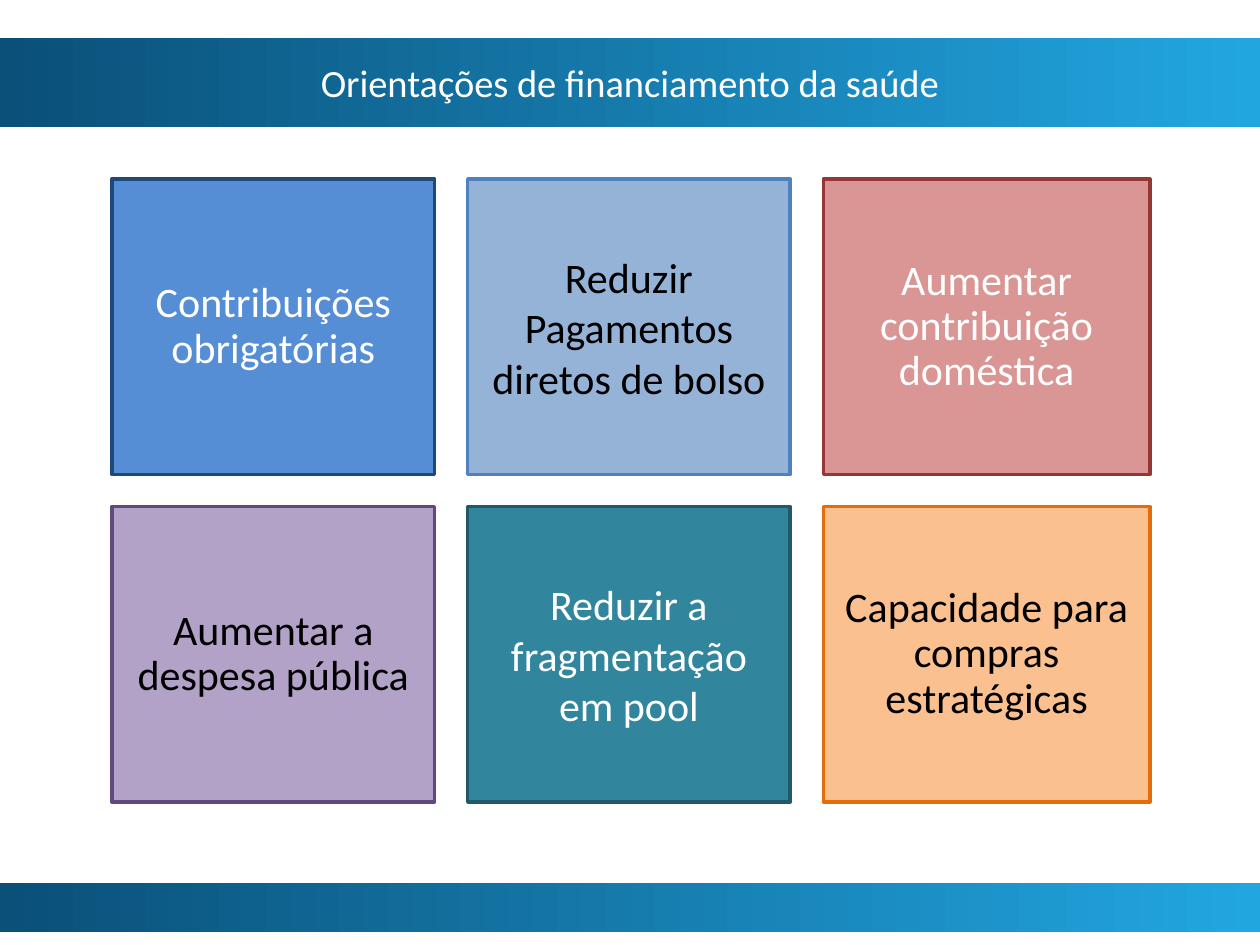
import pptx
import pptx.util
import pptx.dml.color
import pptx.enum.shapes
import pptx.enum.text

Cm, Pt = pptx.util.Cm, pptx.util.Pt
RECTANGLE = pptx.enum.shapes.MSO_SHAPE.RECTANGLE


def color(hex_value):
    return pptx.dml.color.RGBColor.from_string(hex_value)


def write(text_frame, text, size, hex_value, spacing=None):
    text_frame.word_wrap = True
    text_frame.text = text
    for paragraph in text_frame.paragraphs:
        paragraph.alignment = pptx.enum.text.PP_ALIGN.CENTER
        paragraph.line_spacing = spacing
        for run in paragraph.runs:
            run.font.name = "Calibri"
            run.font.size = Pt(size)
            run.font.color.rgb = color(hex_value)


presentation = pptx.Presentation()
presentation.slide_width = Cm(25.4)
presentation.slide_height = Cm(19.05)
slide = presentation.slides.add_slide(presentation.slide_layouts[6])

# Gradient bands: footer and header
for top, height in [(17.81, 0.97), (0.77, 1.79)]:
    band = slide.shapes.add_shape(RECTANGLE, 0, Cm(top), Cm(25.4), Cm(height))
    band.shadow.inherit = False
    band.line.fill.background()
    band.fill.gradient()
    band.fill.gradient_angle = 0
    for stop, position, shade in zip(band.fill.gradient_stops, (0, 1), ("0A5079", "22A6E0")):
        stop.position = position
        stop.color.rgb = color(shade)

# Guideline cards, three to a row: text, fill, line, text colour, line spacing
guidelines = [
    ("Contribuições obrigatórias", "558ED5", "1F497D", "FFFFFF", 0.9),
    ("Reduzir\nPagamentos diretos de bolso", "95B3D7", "4F81BD", "000000", 1.0),
    ("Aumentar\ncontribuição doméstica", "D99694", "953735", "FFFFFF", 0.9),
    ("Aumentar a despesa pública", "B3A2C7", "604A7B", "000000", 0.9),
    ("Reduzir a fragmentação\nem pool", "31859C", "215968", "FFFFFF", 1.0),
    ("Capacidade para compras estratégicas", "FAC090", "E46C0A", "000000", 0.9),
]
card_widths = [6.5, 6.5, 6.58]
for index, (text, fill, line, text_color, spacing) in enumerate(guidelines):
    row, column = divmod(index, 3)
    card = slide.shapes.add_shape(
        RECTANGLE, Cm(2.26 + 7.17 * column), Cm(3.61 + 6.6 * row),
        Cm(card_widths[column]), Cm(5.96))
    card.shadow.inherit = False
    card.fill.solid()
    card.fill.fore_color.rgb = color(fill)
    card.line.color.rgb = color(line)
    card.line.width = Pt(2)
    frame = card.text_frame
    frame.margin_left = frame.margin_right = Cm(0.1)
    frame.margin_top = frame.margin_bottom = Cm(0.2)
    frame.vertical_anchor = pptx.enum.text.MSO_ANCHOR.MIDDLE
    write(frame, text, 24, text_color, spacing)

# Title over the header band
title = slide.shapes.add_textbox(0, Cm(1.07), Cm(25.4), Cm(2.08))
write(title.text_frame, "Orientações de financiamento da saúde", 22, "FFFFFF")

presentation.save("out.pptx")
